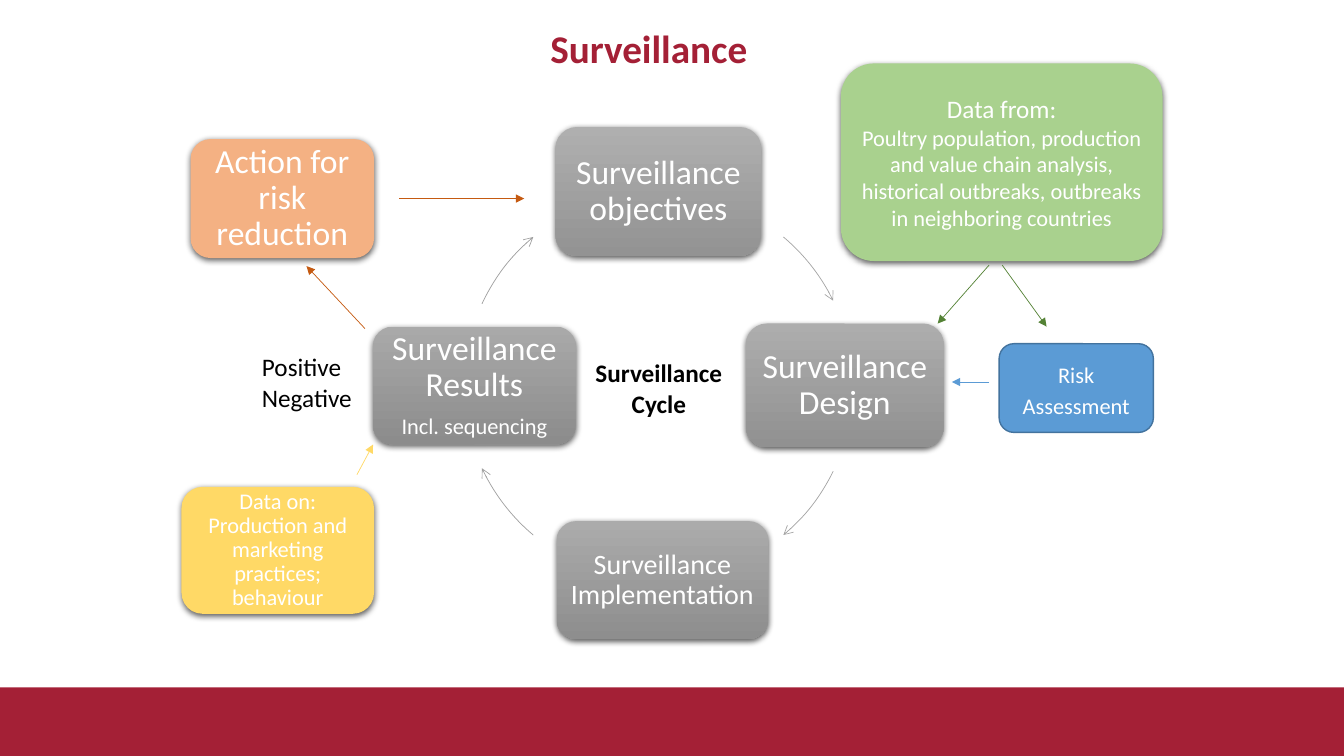
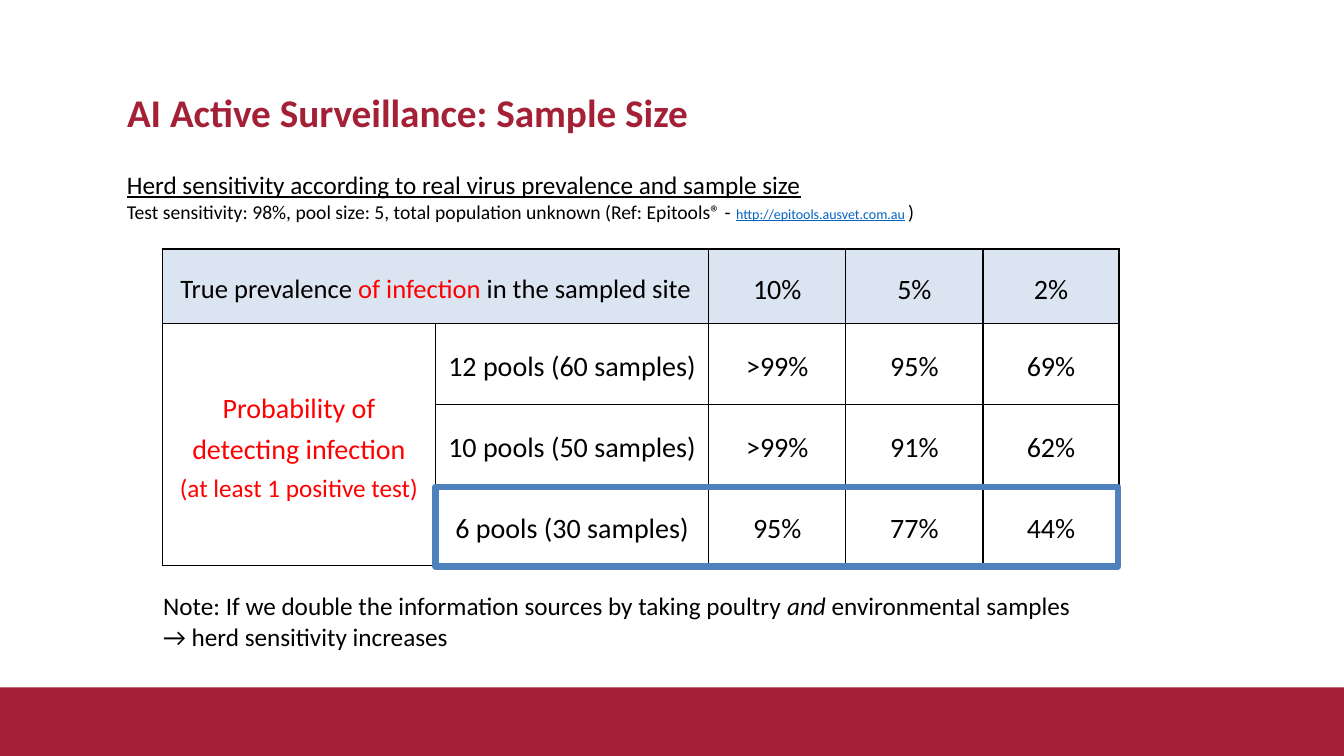
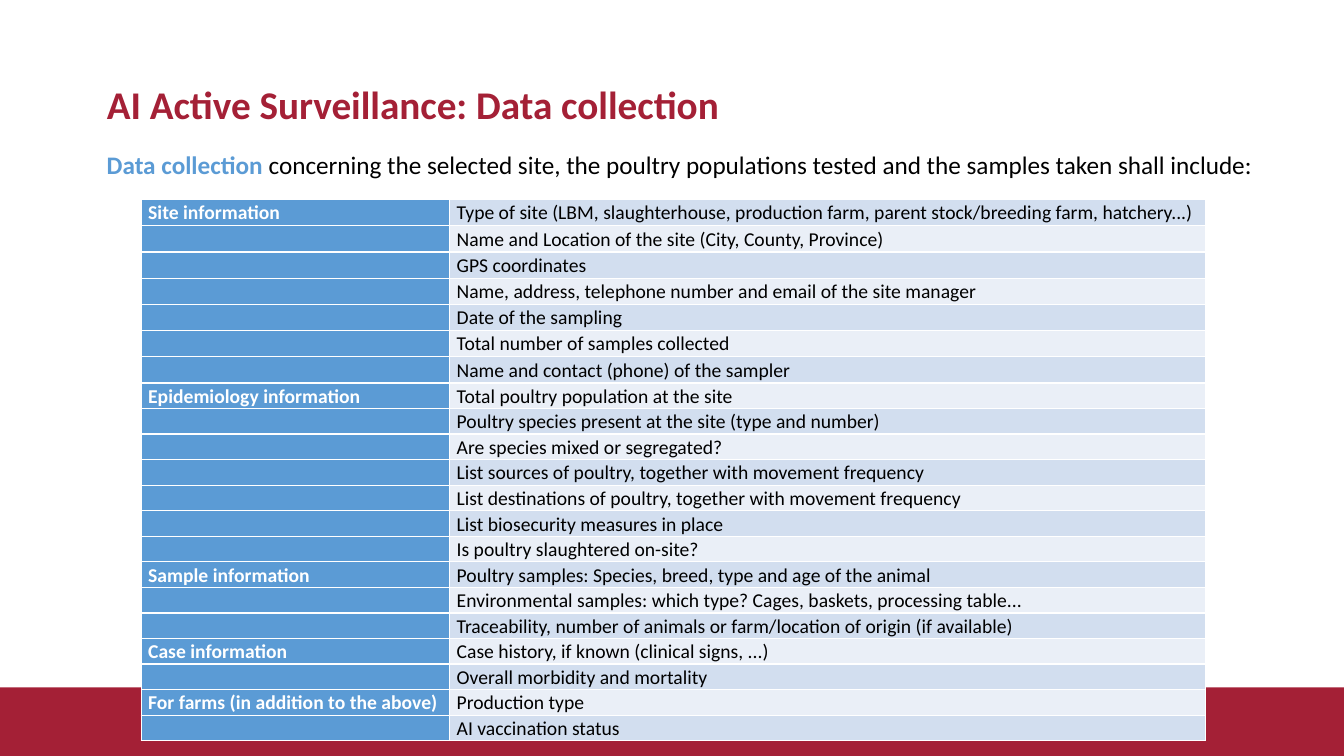
from lxml.etree import SubElement
from pptx import Presentation
from pptx.dml.color import RGBColor
from pptx.enum.shapes import MSO_CONNECTOR, MSO_SHAPE
from pptx.enum.text import MSO_ANCHOR, MSO_AUTO_SIZE, PP_ALIGN
from pptx.oxml.ns import qn
from pptx.util import Pt

PX = 9144  # 100 px to the inch
FONT = "Calibri"
CRIMSON, BLUE, WHITE, BLACK, RED = "A42036", "5B9BD5", "FFFFFF", "000000", "FF0000"
LEFT, CENTER = PP_ALIGN.LEFT, PP_ALIGN.CENTER
rgb = RGBColor.from_string


def write_text(frame, paragraphs, size, colour, align=LEFT, spacing=1.0, after=0, bold=False):
    """Each paragraph is a list of (text, changes) runs."""
    frame.word_wrap = True
    for index, runs in enumerate(paragraphs):
        paragraph = frame.add_paragraph() if index else frame.paragraphs[0]
        paragraph.alignment = align
        paragraph.line_spacing = spacing
        paragraph.space_after = Pt(after)
        for text, changes in runs:
            run = paragraph.add_run()
            run.text = text
            run.font.name = FONT
            run.font.size = Pt(changes.get("size", size))
            run.font.color.rgb = rgb(changes.get("colour", colour))
            run.font.bold = changes.get("bold", bold)
            run.font.italic = changes.get("italic", False)
            run.font.underline = changes.get("underline", False)


def style_cell(cell, fill, border):
    cell.margin_left = cell.margin_right = 7 * PX
    cell.margin_top = cell.margin_bottom = 0
    properties = cell._tc.get_or_add_tcPr()
    for side in ("lnL", "lnR", "lnT", "lnB"):
        line = SubElement(properties, qn(f"a:{side}"), w=str(Pt(1)))
        SubElement(SubElement(line, qn("a:solidFill")), qn("a:srgbClr"), val=border)
    if fill:
        cell.fill.solid()
        cell.fill.fore_color.rgb = rgb(fill)
    else:
        cell.fill.background()


presentation = Presentation()
presentation.slide_width, presentation.slide_height = 1333 * PX, 750 * PX
layout = presentation.slide_layouts[5]

# Slides and their titles
titles = [
    ("Surveillance", (520, 10, 247, 81), CENTER),
    ("AI Active Surveillance: Sample Size", (116, 74, 900, 79), LEFT),
    ("AI Active Surveillance: Data collection", (96, 66, 900, 79), LEFT),
]
slides = []
for text, place, align in titles:
    slide = presentation.slides.add_slide(layout)
    title = slide.shapes.title
    title.left, title.top, title.width, title.height = [value * PX for value in place]
    title.text_frame.vertical_anchor = MSO_ANCHOR.MIDDLE
    title.text_frame.auto_size = MSO_AUTO_SIZE.NONE
    write_text(title.text_frame, [[(text, {})]], 28, CRIMSON, align, 0.9, bold=True)
    slides.append(slide)
cycle_slide, sample_slide, data_slide = slides

# Bottom band, moved to the shared layout
band = cycle_slide.shapes.add_shape(MSO_SHAPE.RECTANGLE, 0, 682 * PX, 1333 * PX, 68 * PX)
band.shadow.inherit = False
band.fill.solid()
band.fill.fore_color.rgb = rgb(CRIMSON)
band.line.fill.background()
layout.shapes._spTree.insert(2, band._element)

# Slide 1: boxes as place, colours, outline, insets, size, line spacing, paragraphs
shapes = cycle_slide.shapes
boxes = [
    ((551, 126, 204, 128), ("AFAFAF", "939393"), None, (10, 10), 24, 0.9,
     [[("Surveillance objectives", {})]]),
    ((740, 321, 196, 123), ("ADADAD", "919191"), None, (10, 10), 24, 0.9,
     [[("Surveillance Design", {})]]),
    ((552, 517, 210, 117), ("ABABAB", "8E8E8E"), None, (7, 7), 20, 0.9,
     [[("Surveillance Implementation", {})]]),
    ((370, 324, 201, 117), ("A9A9A9", "8C8C8C"), None, (10, 10), 24, 0.9,
     [[("Surveillance Results", {})], [("Incl. sequencing", {"size": 16})]]),
    ((189, 138, 182, 118), ("F4B183",), None, (7, 7), 24, 0.9,
     [[("Action for risk reduction", {})]]),
    ((834, 63, 319, 196), ("A9D18E",), None, (7, 7), 16, 1.0,
     [[("Data from:", {"size": 18})],
      [("Poultry population, production and value chain analysis, historical outbreaks, "
        "outbreaks in neighboring countries", {})]]),
    ((180, 483, 191, 126), ("FFD966",), None, (17, 9), 16, 0.9,
     [[("Data on: Production and marketing practices; behaviour", {})]]),
    ((991, 341, 153, 88), (BLUE,), "43739E", (10, 5), 16, 1.15,
     [[("Risk", {})], [("Assessment", {})]]),
]
for place, colours, outline, insets, size, spacing, paragraphs in boxes:
    box = shapes.add_shape(MSO_SHAPE.ROUNDED_RECTANGLE, *[value * PX for value in place])
    if len(colours) == 2:
        box.fill.gradient()
        box.fill.gradient_angle = 270
        for stop, colour in zip(box.fill.gradient_stops, colours):
            stop.color.rgb = rgb(colour)
    else:
        box.fill.solid()
        box.fill.fore_color.rgb = rgb(colours[0])
    box.shadow.inherit = False
    if outline:
        box.line.color.rgb = rgb(outline)
        box.line.width = Pt(1)
    else:
        box.line.fill.background()
        effects = box._element.spPr.find(qn("a:effectLst"))
        shadow = SubElement(effects, qn("a:outerShdw"), blurRad=str(Pt(4.5)),
                            dist=str(Pt(1.5)), dir="5400000", rotWithShape="0")
        shade = SubElement(shadow, qn("a:srgbClr"), val=BLACK)
        SubElement(shade, qn("a:alpha"), val="63000")
    frame = box.text_frame
    frame.vertical_anchor = MSO_ANCHOR.MIDDLE
    frame.margin_left = frame.margin_right = insets[0] * PX
    frame.margin_top = frame.margin_bottom = insets[1] * PX
    after = 8 if colours[0] == "A9A9A9" else 0
    write_text(frame, paragraphs, size, WHITE, CENTER, spacing, after)

# Curved arrows of the cycle, by start and end angle clockwise from the right
arrows = []
for start, end, colour in [(310, 334, "A5A5A5"), (26, 50, "A3A3A3"),
                           (130, 155, "A0A0A0"), (205, 230, "9E9E9E")]:
    arc = shapes.add_shape(MSO_SHAPE.ARC, 460 * PX, 190 * PX, 386 * PX, 386 * PX)
    arc.adjustments[0], arc.adjustments[1] = start * 0.6, end * 0.6
    arc.fill.background()
    arrows.append((arc, colour, "arrow"))

# Straight arrows between the boxes
for ends, colour in [((362, 326, 304, 264), "C55A11"), ((396, 197, 520, 197), "C55A11"),
                     ((981, 263, 930, 321), "548235"), ((994, 263, 1038, 324), "548235"),
                     ((981, 379, 944, 379), BLUE), ((354, 471, 370, 441), "FFD966")]:
    connector = shapes.add_connector(MSO_CONNECTOR.STRAIGHT, *[value * PX for value in ends])
    arrows.append((connector, colour, "triangle"))

for arrow, colour, head in arrows:
    arrow.line.color.rgb = rgb(colour)
    arrow.line.width = Pt(0.5)
    SubElement(arrow.line._get_or_add_ln(), qn("a:tailEnd"), type=head)
    SubElement(arrow._element.spPr, qn("a:effectLst"))

# Slide 2: table of sample sizes
percentages = [
    ("", "", "10%", "5%", "2%"),
    ("", "12 pools (60 samples)", ">99%", "95%", "69%"),
    ("", "10 pools (50 samples)", ">99%", "91%", "62%"),
    ("", "6 pools (30 samples)", "95%", "77%", "44%"),
]
frame = sample_slide.shapes.add_table(4, 5, 161 * PX, 247 * PX, 949 * PX, 314 * PX)
table = frame.table
table.first_row = table.horz_banding = False
for column, width in zip(table.columns, (271, 271, 136, 136, 135)):
    column.width = width * PX
for row, height in zip(table.rows, (74, 80, 80, 80)):
    row.height = height * PX
for row_index, values in enumerate(percentages):
    for column_index, value in enumerate(values):
        cell = table.cell(row_index, column_index)
        style_cell(cell, None if row_index else "DBE5F1", BLACK)
        cell.vertical_anchor = MSO_ANCHOR.MIDDLE
        if value:
            write_text(cell.text_frame, [[(value, {})]], 20, BLACK, CENTER, 1.2)
table.cell(0, 0).merge(table.cell(0, 1))
table.cell(1, 0).merge(table.cell(3, 0))
write_text(table.cell(0, 0).text_frame,
           [[("True prevalence ", {}), ("of infection", {"colour": RED}),
             (" in the sampled site", {})]], 19, BLACK, CENTER, 1.2)
write_text(table.cell(1, 0).text_frame,
           [[("Probability of detecting infection", {})],
            [("(at least 1 positive test)", {"size": 18})]], 20, RED, CENTER, 1.2)

# Outline around the last row
highlight = sample_slide.shapes.add_shape(
    MSO_SHAPE.RECTANGLE, 432 * PX, 483 * PX, 677 * PX, 79 * PX)
highlight.shadow.inherit = False
highlight.fill.background()
highlight.line.color.rgb = rgb("4F81BD")
highlight.line.width = Pt(4.5)

# Slide 3: table of data to collect
sections = [
    ("Site information", [
        "Type of site (LBM, slaughterhouse, production farm, parent stock/breeding farm, "
        "hatchery...)",
        "Name and Location of the site (City, County, Province)",
        "GPS coordinates",
        "Name, address, telephone number and email of the site manager",
        "Date of the sampling",
        "Total number of samples collected",
        "Name and contact (phone) of the sampler"]),
    ("Epidemiology information", [
        "Total poultry population at the site",
        "Poultry species present at the site (type and number)",
        "Are species mixed or segregated?",
        "List sources of poultry, together with movement frequency",
        "List destinations of poultry, together with movement frequency",
        "List biosecurity measures in place",
        "Is poultry slaughtered on-site?"]),
    ("Sample information", [
        "Poultry samples: Species, breed, type and age of the animal",
        "Environmental samples: which type? Cages, baskets, processing table...",
        "Traceability, number of animals or farm/location of origin (if available)"]),
    ("Case information", [
        "Case history, if known (clinical signs, ...)",
        "Overall morbidity and mortality"]),
    ("For farms (in addition to the above)", ["Production type", "AI vaccination status"]),
]
rows = [("" if index else heading, item)
        for heading, items in sections for index, item in enumerate(items)]
frame = data_slide.shapes.add_table(len(rows), 2, 140 * PX, 198 * PX, 1056 * PX, 533 * PX)
table = frame.table
table.first_row = table.horz_banding = False
table.columns[0].width, table.columns[1].width = 306 * PX, 750 * PX
for index, (heading, item) in enumerate(rows):
    table.rows[index].height = (26 if index < 7 else 25) * PX
    heading_cell, item_cell = table.cell(index, 0), table.cell(index, 1)
    style_cell(heading_cell, BLUE, WHITE)
    style_cell(item_cell, "EAEFF7" if index % 2 else "D2DEEF", WHITE)
    write_text(item_cell.text_frame, [[(item, {})]], 14, BLACK, spacing=1.07)
    if heading:
        write_text(heading_cell.text_frame, [[(heading, {})]], 14, WHITE, spacing=1.07, bold=True)
    else:
        # An empty cell keeps the row low only with a small end mark
        SubElement(heading_cell.text_frame.paragraphs[0]._p, qn("a:endParaRPr"), sz="1400")

# Free text on all slides
labels = [
    (cycle_slide, (250, 344, 115, 71), LEFT, False, [[("Positive", {})], [("Negative", {})]]),
    (cycle_slide, (580, 350, 147, 71), CENTER, True, [[("Surveillance", {})], [("Cycle", {})]]),
    (sample_slide, (116, 163, 819, 64), LEFT, False, [
        [("Herd sensitivity according to real virus prevalence and sample size",
          {"underline": True})],
        [("Test sensitivity: 98%, pool size: 5, total population unknown (Ref: Epitools® - ",
          {"size": 14}),
         ("http://epitools.ausvet.com.au", {"size": 10, "colour": "0563C1", "underline": True}),
         (" ", {"size": 10}), (")", {"size": 14})]]),
    (sample_slide, (152, 581, 941, 71), LEFT, False, [
        [("Note: If we double the information sources by taking poultry ", {}),
         ("and", {"italic": True}),
         (" environmental samples → herd sensitivity increases", {})]]),
    (data_slide, (96, 143, 1185, 71), LEFT, False, [
        [("Data collection ", {"colour": BLUE, "bold": True}),
         ("concerning the selected site, the poultry populations tested and the samples taken "
          "shall include:", {})]]),
]
for slide, place, align, bold, paragraphs in labels:
    label = slide.shapes.add_textbox(*[value * PX for value in place])
    write_text(label.text_frame, paragraphs, 18, BLACK, align, bold=bold)

presentation.save("out.pptx")
